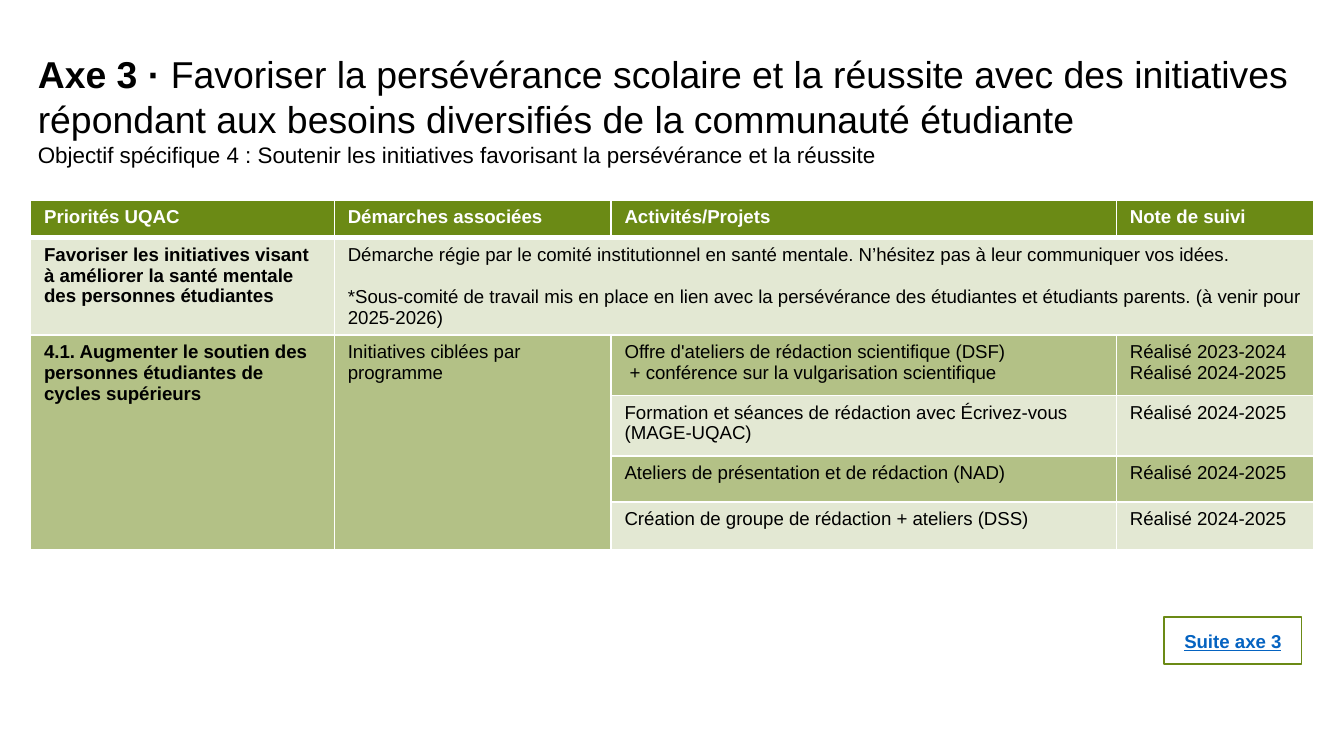
from lxml.etree import SubElement
from pptx import Presentation
from pptx.dml.color import RGBColor
from pptx.enum.shapes import MSO_SHAPE
from pptx.enum.text import MSO_ANCHOR, MSO_AUTO_SIZE, PP_ALIGN
from pptx.oxml.ns import qn
from pptx.util import Cm, Pt

FONT = "Arial"
BLACK = RGBColor(0x00, 0x00, 0x00)
WHITE = RGBColor(0xFF, 0xFF, 0xFF)
GREEN = RGBColor(0x6B, 0x8A, 0x15)
SAGE = RGBColor(0xB3, 0xC1, 0x86)
PALE = RGBColor(0xE3, 0xE8, 0xD3)
LINK_BLUE = RGBColor(0x05, 0x63, 0xC1)

COL_WIDTHS = [5.74, 5.23, 9.55, 3.73]
ROW_HEIGHTS = [0.71, 1.57, 1.14, 1.14, 0.87, 0.91]
ROW_FILLS = [GREEN, PALE, SAGE, PALE, SAGE, PALE]
MERGES = [((1, 1), (1, 3)), ((2, 0), (5, 0)), ((2, 1), (5, 1))]
ROWS = [
    [["Priorités UQAC"], ["Démarches associées"], ["Activités/Projets"], ["Note de suivi"]],
    [["Favoriser les initiatives visant à améliorer la santé mentale des personnes étudiantes"],
     ["Démarche régie par le comité institutionnel en santé mentale. "
      "N’hésitez pas à leur communiquer vos idées.",
      "*Sous-comité de travail mis en place en lien avec la persévérance des étudiantes "
      "et étudiants parents. (à venir pour 2025-2026)"], [], []],
    [["4.1. Augmenter le soutien des personnes étudiantes de cycles supérieurs"],
     ["Initiatives ciblées par programme"],
     ["Offre d'ateliers de rédaction scientifique (DSF)",
      " + conférence sur la vulgarisation scientifique"],
     ["Réalisé 2023-2024", "Réalisé 2024-2025"]],
    [[], [], ["Formation et séances de rédaction avec Écrivez-vous (MAGE-UQAC)"],
     ["Réalisé 2024-2025"]],
    [[], [], ["Ateliers de présentation et de rédaction (NAD)"], ["Réalisé 2024-2025"]],
    [[], [], ["Création de groupe de rédaction + ateliers (DSS)"], ["Réalisé 2024-2025"]],
]


def add_run(p, text, size, color=BLACK, bold=False):
    """Append a formatted run to a paragraph and return it."""
    r = p.add_run()
    r.text = text
    r.font.name, r.font.size, r.font.bold = FONT, Pt(size), bold
    r.font.color.rgb = color
    return r


def set_box(sp, left, top, width, height):
    """Place a shape in the given box."""
    sp.left, sp.top, sp.width, sp.height = left, top, width, height


def add_title(slide, left, top, width, height):
    """Fill the title placeholder with the axis and its objective."""
    sp = slide.shapes.title
    set_box(sp, left, top, width, height)
    tf = sp.text_frame
    tf.word_wrap, tf.auto_size = True, MSO_AUTO_SIZE.NONE
    tf.vertical_anchor = MSO_ANCHOR.MIDDLE
    p = tf.paragraphs[0]
    add_run(p, "Axe 3 · ", 20, bold=True)
    add_run(p, "Favoriser la persévérance scolaire et la réussite avec des initiatives "
               "répondant aux besoins diversifiés de la communauté étudiante", 20)
    add_run(tf.add_paragraph(), "Objectif spécifique 4 : Soutenir les initiatives "
                                "favorisant la persévérance et la réussite", 12)
    for p in tf.paragraphs:
        p.alignment = PP_ALIGN.LEFT


def set_borders(cell, row):
    """Draw white cell borders, thicker below the header row."""
    tc_pr = cell._tc.get_or_add_tcPr()
    thick = {("lnB", 0), ("lnT", 1)}
    for side in ("lnL", "lnR", "lnT", "lnB"):
        width = Pt(3 if (side, row) in thick else 1)
        ln = SubElement(tc_pr, qn(f"a:{side}"), w=str(width))
        fill = SubElement(ln, qn("a:solidFill"))
        SubElement(fill, qn("a:srgbClr"), val=str(WHITE))


def fill_cell(cell, lines, row, col):
    """Style one cell and write its lines."""
    set_borders(cell, row)
    cell.fill.solid()
    cell.fill.fore_color.rgb = ROW_FILLS[row]
    tf = cell.text_frame
    for i, line in enumerate(lines):
        p = tf.add_paragraph() if i else tf.paragraphs[0]
        if i and row == 1:
            p.space_before = Pt(11.5)
        add_run(p, line, 10, WHITE if row == 0 else BLACK, bold=row == 0 or col == 0)


def add_priorities(slide, left, top, width, height):
    """Add the table of priorities, activities and follow-up."""
    table = slide.shapes.add_table(len(ROWS), len(COL_WIDTHS), left, top, width, height).table
    for column, size in zip(table.columns, COL_WIDTHS):
        column.width = Cm(size)
    for row, size in zip(table.rows, ROW_HEIGHTS):
        row.height = Cm(size)
    for start, end in MERGES:
        table.cell(*start).merge(table.cell(*end))
    for i, row in enumerate(ROWS):
        for j, lines in enumerate(row):
            fill_cell(table.cell(i, j), lines, i, j)


def add_button(slide, left, top, width, height):
    """Add the outlined button leading to the rest of the axis."""
    sp = slide.shapes.add_shape(MSO_SHAPE.RECTANGLE, left, top, width, height)
    sp.shadow.inherit = False
    sp.fill.solid()
    sp.fill.fore_color.rgb = WHITE
    sp.line.color.rgb, sp.line.width = GREEN, Pt(1)
    tf = sp.text_frame
    tf.word_wrap, tf.vertical_anchor = True, MSO_ANCHOR.MIDDLE
    p = tf.paragraphs[0]
    p.alignment = PP_ALIGN.CENTER
    add_run(p, "Suite axe 3", 10, LINK_BLUE, bold=True).font.underline = True


def main():
    """Build and save the slide."""
    prs = Presentation()
    prs.slide_width, prs.slide_height = Cm(25.4), Cm(14.28)
    slide = prs.slides.add_slide(prs.slide_layouts[5])
    add_title(slide, Cm(0.46), Cm(0.79), Cm(24.38), Cm(2.57))
    add_priorities(slide, Cm(0.58), Cm(3.78), Cm(sum(COL_WIDTHS)), Cm(sum(ROW_HEIGHTS)))
    add_button(slide, Cm(22), Cm(11.66), Cm(2.6), Cm(0.89))
    prs.save("out.pptx")


if __name__ == "__main__":
    main()
